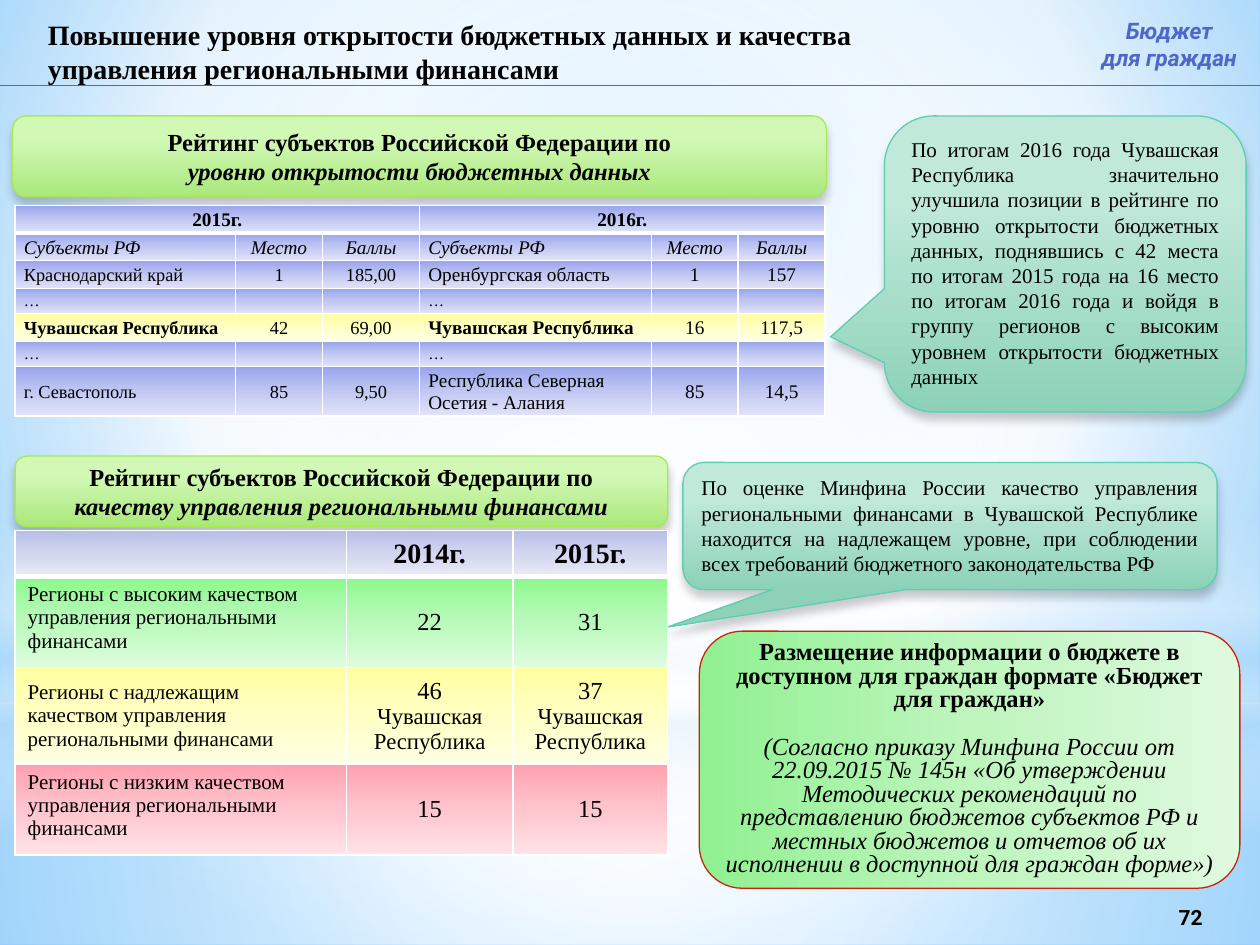
from lxml import etree
from pptx import Presentation
from pptx.dml.color import RGBColor
from pptx.enum.shapes import MSO_CONNECTOR, MSO_SHAPE
from pptx.enum.text import MSO_ANCHOR as Anchor, MSO_AUTO_SIZE as AutoSize, PP_ALIGN as Align
from pptx.oxml.ns import qn
from pptx.util import Inches, Pt

COLORS = {"black": "000000", "white": "FFFFFF", "sky": "B4DCFA", "blue": "4E67C8",
          "lime_edge": "A7EA52", "mint_edge": "5DCEAF", "red_edge": "C3260C"}
WHITE, SKY = COLORS["white"], COLORS["sky"]
# Gradient stops: position, colour and, where it is not opaque, opacity in percent
GRADIENTS = {
    "page": [(0, "9ED5FF"), (60, WHITE), (100, "5BB9FF")],
    "lower": [(0, WHITE, 91), (37, WHITE, 76), (100, SKY, 79)],
    "upper": [(0, WHITE, 89), (48, WHITE, 62), (100, SKY, 79)],
    "band": [(0, WHITE, 0), (29, WHITE, 30), (45, SKY, 40), (55, WHITE, 26),
             (65, SKY, 60), (100, WHITE, 0)],
    "glow": [(0, WHITE), (56, WHITE, 0)],
    "lime": [(28, "D1F8B5"), (100, "AAE87B")],
    "mint": [(28, "C0E9DA"), (100, "8CD1B8")],
    "card": [(0, "91F191"), (50, "BDF5BD"), (100, "DFF9DF")],
    "violet": [(0, "98A4ED"), (50, "C1C7F2"), (100, "E1E3F8")],
    "lavender": [(0, "B7BEE7"), (50, "D2D6EF"), (100, "E8EAF7")],
    "green": [(0, "8CF98D"), (50, "BAF9BB"), (100, "DEFCDE")],
    "yellow": [(0, "FFFFA0"), (50, "FFFFC5"), (100, "FFFFE3")],
    "pink": [(0, "FFA0AF"), (50, "FFC5CE"), (100, "FFE3E7")],
}
CENTER = (50, 50, 50, 50)


def add_color(parent, color, opacity=100):
    element = etree.SubElement(parent, qn("a:srgbClr"), val=color)
    if opacity < 100:
        etree.SubElement(element, qn("a:alpha"), val=str(opacity * 1000))


def paint(fill, properties, name, angle=90, focus=None):
    """Put a linear gradient, or a circular one around focus, into the properties element."""
    fill.background()
    gradient = etree.Element(qn("a:gradFill"), rotWithShape="1")
    stops = etree.SubElement(gradient, qn("a:gsLst"))
    for position, *color in GRADIENTS[name]:
        add_color(etree.SubElement(stops, qn("a:gs"), pos=str(position * 1000)), *color)
    if focus:
        circle = etree.SubElement(gradient, qn("a:path"), path="circle")
        sides = {side: str(value * 1000) for side, value in zip("ltrb", focus)}
        etree.SubElement(circle, qn("a:fillToRect"), **sides)
    else:
        etree.SubElement(gradient, qn("a:lin"), ang=str(angle * 60000), scaled="0")
    properties.replace(properties.find(qn("a:noFill")), gradient)


def write(frame, lines, align=Align.CENTER, spacing=None, gap=0, color="black", **common):
    """Fill a text frame with (text, font values) lines; gap is the space between them."""
    for index, (text, values) in enumerate(lines):
        paragraph = frame.add_paragraph() if index else frame.paragraphs[0]
        paragraph.alignment = align
        if spacing:
            paragraph.line_spacing = spacing
        if index and gap:
            paragraph.space_before = Pt(gap)
        if text:
            paragraph.add_run().text = text
        target = paragraph.runs[0].font if text else paragraph.font
        for name, value in {"name": "Times New Roman", **common, **values}.items():
            setattr(target, name, Pt(value) if name == "size" else value)
        target.color.rgb = RGBColor.from_string(COLORS[color])


def add_panel(slide, kind, box, gradient, edge=None, shadow=False, **direction):
    shape = slide.shapes.add_shape(kind, *map(Inches, box))
    shape.shadow.inherit = False
    properties = shape.element.spPr
    paint(shape.fill, properties, gradient, **direction)
    if edge:
        shape.line.color.rgb = RGBColor.from_string(COLORS[edge])
        shape.line.width = Pt(0.75)
    else:
        shape.line.fill.background()
    if shadow:
        outer = etree.SubElement(properties.find(qn("a:effectLst")), qn("a:outerShdw"),
                                 blurRad=str(Pt(5)), dist=str(Pt(4)), dir="5400000",
                                 algn="ctr", rotWithShape="0")
        add_color(outer, COLORS["black"], 20)
    return shape


def add_backdrop(slide):
    fill = slide.background.fill
    fill.background()
    paint(fill, slide.element.find(".//" + qn("p:bgPr")), "page", focus=(20, 10, 20, 60))
    add_panel(slide, MSO_SHAPE.RECTANGLE, (0, 5.58, 10, 1.92), "lower", focus=CENTER)
    add_panel(slide, MSO_SHAPE.RECTANGLE, (0, 0, 10, 5.58), "upper", focus=CENTER)
    add_panel(slide, MSO_SHAPE.RECTANGLE, (0, 4.12, 10, 2.5), "band")
    add_panel(slide, MSO_SHAPE.OVAL, (0, 1.75, 10, 5.58), "glow", focus=CENTER)


def add_label(slide, box, lines, **values):
    frame = slide.shapes.add_textbox(*map(Inches, box)).text_frame
    frame.word_wrap = True
    frame.vertical_anchor = Anchor.MIDDLE
    write(frame, lines, name="Roboto", bold=True, **values)


def add_header(slide, box, text):
    title = slide.shapes.title
    slide.shapes.element.append(title.element)  # in front of the backdrop
    for name, value in zip(("left", "top", "width", "height"), box):
        setattr(title, name, Inches(value))
    frame = title.text_frame
    frame.word_wrap, frame.auto_size = True, AutoSize.NONE
    frame.vertical_anchor = Anchor.TOP
    write(frame, [(text, {})], Align.LEFT, size=16, bold=True)
    rule = slide.shapes.add_connector(MSO_CONNECTOR.STRAIGHT, 0, Inches(0.68),
                                      Inches(10), Inches(0.68))
    rule.line.color.rgb = RGBColor.from_string(COLORS["blue"])
    rule.line.width = Pt(0.75)
    etree.SubElement(rule.element.spPr, qn("a:effectLst"))
    add_label(slide, (8.61, 0.08, 1.34, 0.54), [("Бюджет", {}), ("для граждан", {})],
              size=13, italic=True, color="blue")


def add_banner(slide, box, subject):
    banner = add_panel(slide, MSO_SHAPE.ROUNDED_RECTANGLE, box, "lime", "lime_edge", True)
    write(banner.text_frame, [("Рейтинг субъектов Российской Федерации по", {}),
                              (subject, {"italic": True})], size=14, bold=True)


def add_callout(slide, box, tip, text):
    callout = add_panel(slide, MSO_SHAPE.ROUNDED_RECTANGULAR_CALLOUT, box,
                        "mint", "mint_edge", True)
    callout.adjustments[0], callout.adjustments[1] = tip
    frame = callout.text_frame
    frame.vertical_anchor, frame.auto_size = Anchor.TOP, AutoSize.SHAPE_TO_FIT_TEXT
    write(frame, [(text, {})], Align.JUSTIFY, size=12)


def add_format_card(slide, box):
    card = add_panel(slide, MSO_SHAPE.ROUNDED_RECTANGLE, box, "card", "red_edge", angle=0)
    write(card.text_frame, [
        ("Размещение информации о бюджете в доступном для граждан формате «Бюджет для граждан»",
         {"bold": True}),
        ("(Согласно приказу Минфина России от 22.09.2015 № 145н «Об утверждении Методических "
         "рекомендаций по представлению бюджетов субъектов РФ и местных бюджетов и отчетов "
         "об их исполнении в доступной для граждан форме»)", {"italic": True}),
    ], spacing=0.8, gap=13.5, size=14)


def add_grid(slide, box, widths, heights, gradients):
    """Add a table with one gradient a row and white rules, thick under the first row."""
    table = slide.shapes.add_table(len(heights), len(widths), *map(Inches, box)).table
    for column, width in zip(table.columns, widths):
        column.width = Inches(width)
    for index, (row, height, gradient) in enumerate(zip(table.rows, heights, gradients)):
        row.height = Inches(height)
        for cell in row.cells:
            properties = cell._tc.get_or_add_tcPr()
            paint(cell.fill, properties, gradient)
            for place, side in enumerate("LRTB"):
                thick = (index, side) in ((0, "B"), (1, "T"))
                line = etree.Element(qn("a:ln" + side), w=str(Pt(3 if thick else 1)))
                add_color(etree.SubElement(line, qn("a:solidFill")), WHITE)
                properties.insert(place, line)
            cell.vertical_anchor = Anchor.MIDDLE
    return table


def add_openness_table(slide, box):
    rows = [("2015г.", "", "", "2016г.", "", ""),
            ("Субъекты РФ", "Место", "Баллы") * 2,
            ("Краснодарский край", "1", "185,00", "Оренбургская область", "1", "157"),
            ("…", "", "") * 2,
            ("Чувашская Республика", "42", "69,00", "Чувашская Республика", "16", "117,5"),
            ("…", "", "") * 2,
            ("г. Севастополь", "85", "9,50", "Республика Северная Осетия - Алания", "85", "14,5")]
    heights = [0.2 if row[0] == "…" else 0.22 for row in rows]
    gradients = ["yellow" if index == 4 else "violet" for index in range(len(rows))]
    table = add_grid(slide, box, (1.75, 0.69, 0.77, 1.84, 0.69, 0.69), heights, gradients)
    for first in (0, 3):
        table.cell(0, first).merge(table.cell(0, first + 2))
    for index, row in enumerate(rows):
        for place, text in enumerate(row):
            cell = table.cell(index, place)
            cell.margin_left = cell.margin_right = Inches(0.07)
            cell.margin_top = cell.margin_bottom = 0
            is_name = place % 3 == 0
            size = 9 if text in ("", "…") else 10.5 if index > 1 and place < 3 else 11
            write(cell.text_frame, [(text, {})], Align.LEFT if is_name and index else Align.CENTER,
                  1.07, size=size, bold=index == 0 or (index == 4 and is_name),
                  italic=index == 1)


def add_quality_table(slide, box):
    rows = [("", "2014г.", "2015г."), ("высоким", "22", "31"),
            ("надлежащим", "46", "37"), ("низким", "15", "15")]
    table = add_grid(slide, box, (2.63, 1.32, 1.23), (0.35, 0.72, 0.73, 0.72),
                     ("lavender", "green", "yellow", "pink"))
    for index, (level, *values) in enumerate(rows):
        name = f"Регионы с {level} качеством управления региональными финансами" if level else ""
        label = table.cell(index, 0)
        write(label.text_frame, [(name, {})], Align.LEFT, size=12)
        if index != 2:
            label.vertical_anchor = Anchor.TOP
        for place, value in enumerate(values, 1):
            lines = [(value, {"size": 14 if index else 16, "bold": index == 0})]
            if index == 2:
                lines.append(("Чувашская Республика", {"size": 13}))
            write(table.cell(index, place).text_frame, lines)


def main():
    presentation = Presentation()
    presentation.slide_width, presentation.slide_height = Inches(10), Inches(7.5)
    slide = presentation.slides.add_slide(presentation.slide_layouts[5])
    add_backdrop(slide)
    add_header(slide, (0.28, 0.09, 7.55, 0.59),
               "Повышение уровня открытости бюджетных данных и качества управления "
               "региональными финансами")
    add_banner(slide, (0.1, 0.92, 6.46, 0.64), "уровню открытости бюджетных данных")
    add_callout(slide, (5.42, 3.67, 4.24, 1.01), (-0.529, 0.794),
                "По оценке Минфина России качество управления региональными финансами в "
                "Чувашской Республике находится на надлежащем уровне, при соблюдении всех "
                "требований бюджетного законодательства РФ")
    add_banner(slide, (0.12, 3.62, 5.18, 0.56), "качеству управления региональными финансами")
    add_openness_table(slide, (0.12, 1.63, 6.44, 1.5))
    add_quality_table(slide, (0.12, 4.21, 5.18, 2.52))
    add_callout(slide, (7.02, 0.92, 2.87, 2.35), (-0.649, 0.246),
                "По итогам 2016 года Чувашская Республика значительно улучшила позиции в "
                "рейтинге по уровню открытости бюджетных данных, поднявшись с 42 места по "
                "итогам 2015 года на 16 место по итогам 2016 года и войдя в группу регионов "
                "с высоким уровнем открытости бюджетных данных")
    add_format_card(slide, (5.55, 5.01, 4.29, 2.04))
    add_label(slide, (8.9, 7.08, 1.1, 0.4), [("72", {})], size=12)
    presentation.save("out.pptx")


if __name__ == "__main__":
    main()
